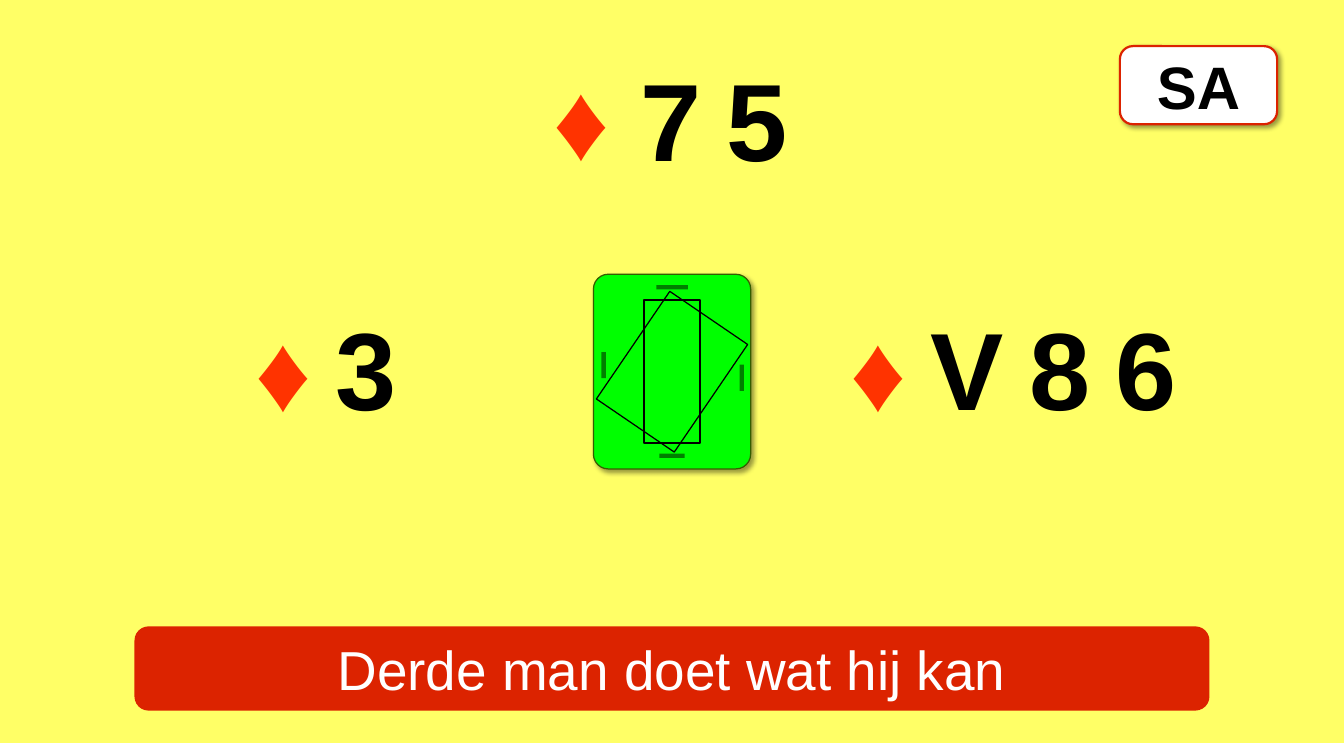
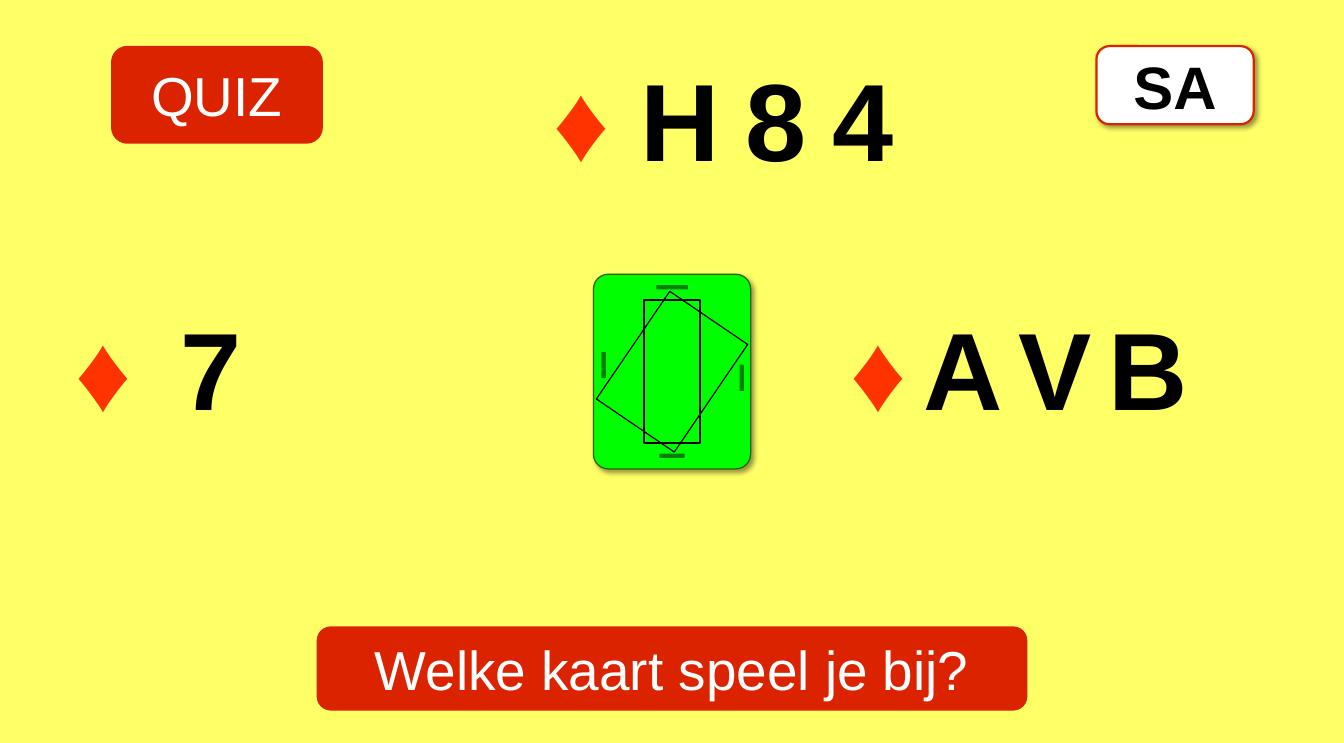
from lxml import etree
from pptx import Presentation
from pptx.dml.color import RGBColor
from pptx.enum import shapes as kinds, text as styles
from pptx.oxml import ns
from pptx.util import Pt

# Rows: top of the cards in the dummy's hand and in the side hands
NORTH, MIDDLE = 36.7, 236.5
SUIT = "♦"

# Content, from back to front: glyphs are (text, left, top)
SLIDES = [
    [
        ("glyphs", [("3", 260.3, MIDDLE), ("5", 573.6, NORTH), ("7", 505, NORTH),
                    ("V", 737.3, MIDDLE), ("8", 816.7, MIDDLE), ("6", 885.6, MIDDLE),
                    (SUIT, 198, 238), (SUIT, 436.3, 37), (SUIT, 674.6, 238)]),
        ("banner", "Derde man doet wat hij kan", 861.5),
        ("card back",),
        ("badge", "SA", 897.5),
    ],
    [
        ("glyphs", [("7", 136, MIDDLE), ("H", 505, NORTH), ("A", 731.5, MIDDLE),
                    ("B", 880, MIDDLE), ("4", 658.8, NORTH)]),
        ("label", "QUIZ"),
        ("glyphs", [(SUIT, 53.3, 238), (SUIT, 436.3, 38), ("8", 589, NORTH),
                    ("V", 807.8, MIDDLE)]),
        ("banner", "Welke kaart speel je bij?", 569.5),
        ("card back",),
        ("badge", "SA", 878.7),
        ("glyphs", [(SUIT, 674.6, 238)]),
    ],
]

# Shared look
WIDTH, HEIGHT = 1077.12, 595.44
COLORS = {"background": "FFFF66", "red": "DC2300", "suit": "FF3300",
          "white": "FFFFFF", "black": "000000", "card": "00FF00",
          "card edge": "355E00"}
CARD_FONT = {"name": "Arial", "size": Pt(88), "bold": True}
SUIT_FONT = {"name": "Arial", "size": Pt(88), "bold": False}
BANNER_FONT = {"name": "Arial", "size": Pt(44), "bold": False}
BADGE_FONT = {"name": "Arial", "size": Pt(48), "bold": True}
CARD_WIDTHS = {"V": 76.3, "H": 81.4, "A": 81.4, "B": 81.4}
DIGIT_WIDTH = 67
ROUNDED = kinds.MSO_SHAPE.ROUNDED_RECTANGLE
RECTANGLE = kinds.MSO_SHAPE.RECTANGLE

# Card back: outlines (box, line width, rotation) and edge marks (from, to)
CARD_BACK = (475.6, 219.8, 126, 156)
OUTLINES = [((516, 240.5, 45, 114.5), 1.75, 0),
            ((500.8, 245.7, 75.6, 104.4), 1, 34.3)]
MARKS = [(551.3, 230.2, 526, 230.2), (548.6, 365.2, 528.5, 365.2),
         (594.5, 313.2, 594.5, 292.3), (483.8, 303.1, 483.8, 282.2)]


def color(name):
    return RGBColor.from_string(COLORS[name])


def points(values):
    return [Pt(value) for value in values]


def set_all(target, values):
    for name, value in values.items():
        setattr(target, name, value)


def add_effects(shape, shadow=False):
    """Give the shape an effect list, empty or with a soft shadow."""
    effects = etree.SubElement(shape._element.spPr, ns.qn("a:effectLst"))
    if shadow:
        outer = etree.SubElement(effects, ns.qn("a:outerShdw"), blurRad=str(Pt(4)),
                                 dist=str(Pt(3)), dir="2700000", algn="tl",
                                 rotWithShape="0")
        tint = etree.SubElement(outer, ns.qn("a:srgbClr"), val=COLORS["black"])
        etree.SubElement(tint, ns.qn("a:alpha"), val="40000")


def write(shape, text, font, font_color, margins, frame_values, align):
    frame = shape.text_frame
    side, top = points(margins)
    set_all(frame, {"margin_left": side, "margin_right": side,
                    "margin_top": top, "margin_bottom": top, **frame_values})
    paragraph = frame.paragraphs[0]
    paragraph.alignment = align
    run = paragraph.add_run()
    run.text = text
    set_all(run.font, font)
    run.font.color.rgb = color(font_color)


def add_box(parent, preset, box, fill=None, line=None, width=1, shadow=False):
    shape = parent.add_shape(preset, *points(box))
    if fill:
        shape.fill.solid()
        shape.fill.fore_color.rgb = color(fill)
    else:
        shape.fill.background()
    if line:
        shape.line.color.rgb = color(line)
        shape.line.width = Pt(width)
    else:
        shape.line.fill.background()
    add_effects(shape, shadow)
    return shape


def add_glyphs(slide, glyphs):
    for text, left, top in glyphs:
        if text == SUIT:
            size, look = (60, 114), (SUIT_FONT, "suit", (7.2, 3.6))
        else:
            size = (CARD_WIDTHS.get(text, DIGIT_WIDTH), 115)
            look = (CARD_FONT, "black", (8.5, 4.5))
        shape = slide.shapes.add_textbox(*points((left, top, *size)))
        write(shape, text, *look,
              {"word_wrap": False,
               "auto_size": styles.MSO_AUTO_SIZE.SHAPE_TO_FIT_TEXT},
              styles.PP_ALIGN.LEFT)


def add_panel(slide, text, box, font=BANNER_FONT, font_color="white",
              fill="red", **look):
    shape = add_box(slide.shapes, ROUNDED, box, fill, **look)
    shape.adjustments[0] = 0.167
    write(shape, text, font, font_color, (8.5, 4.5),
          {"word_wrap": True, "vertical_anchor": styles.MSO_ANCHOR.MIDDLE},
          styles.PP_ALIGN.CENTER)


def add_banner(slide, text, width):
    add_panel(slide, text, ((WIDTH - width) / 2, 502, width, 67.5))


def add_label(slide, text):
    add_panel(slide, text, (89, 36.7, 169.8, 78.5))


def add_badge(slide, text, left):
    add_panel(slide, text, (left, 37, 126, 62.6), BADGE_FONT, "black", "white",
              line="red", width=1.75, shadow=True)


def add_card_back(slide):
    group = slide.shapes.add_group_shape().shapes
    back = add_box(group, ROUNDED, CARD_BACK, "card", "card edge", shadow=True)
    back.adjustments[0] = 0.094
    for box, width, rotation in OUTLINES:
        add_box(group, RECTANGLE, box, line="black", width=width).rotation = rotation
    for ends in MARKS:
        mark = group.add_connector(kinds.MSO_CONNECTOR.STRAIGHT, *points(ends))
        mark.line.color.rgb = color("black")
        mark.line.width = Pt(3.5)
        tint = mark._element.spPr.find(".//" + ns.qn("a:srgbClr"))
        etree.SubElement(tint, ns.qn("a:alpha"), val="50000")
        add_effects(mark)


BUILDERS = {"glyphs": add_glyphs, "banner": add_banner, "label": add_label,
            "badge": add_badge, "card back": add_card_back}


def main():
    presentation = Presentation()
    set_all(presentation, {"slide_width": Pt(WIDTH), "slide_height": Pt(HEIGHT)})
    background = presentation.slide_master.background.fill
    background.solid()
    background.fore_color.rgb = color("background")

    for parts in SLIDES:
        slide = presentation.slides.add_slide(presentation.slide_layouts[6])
        for kind, *values in parts:
            BUILDERS[kind](slide, *values)

    presentation.save("out.pptx")


if __name__ == "__main__":
    main()
